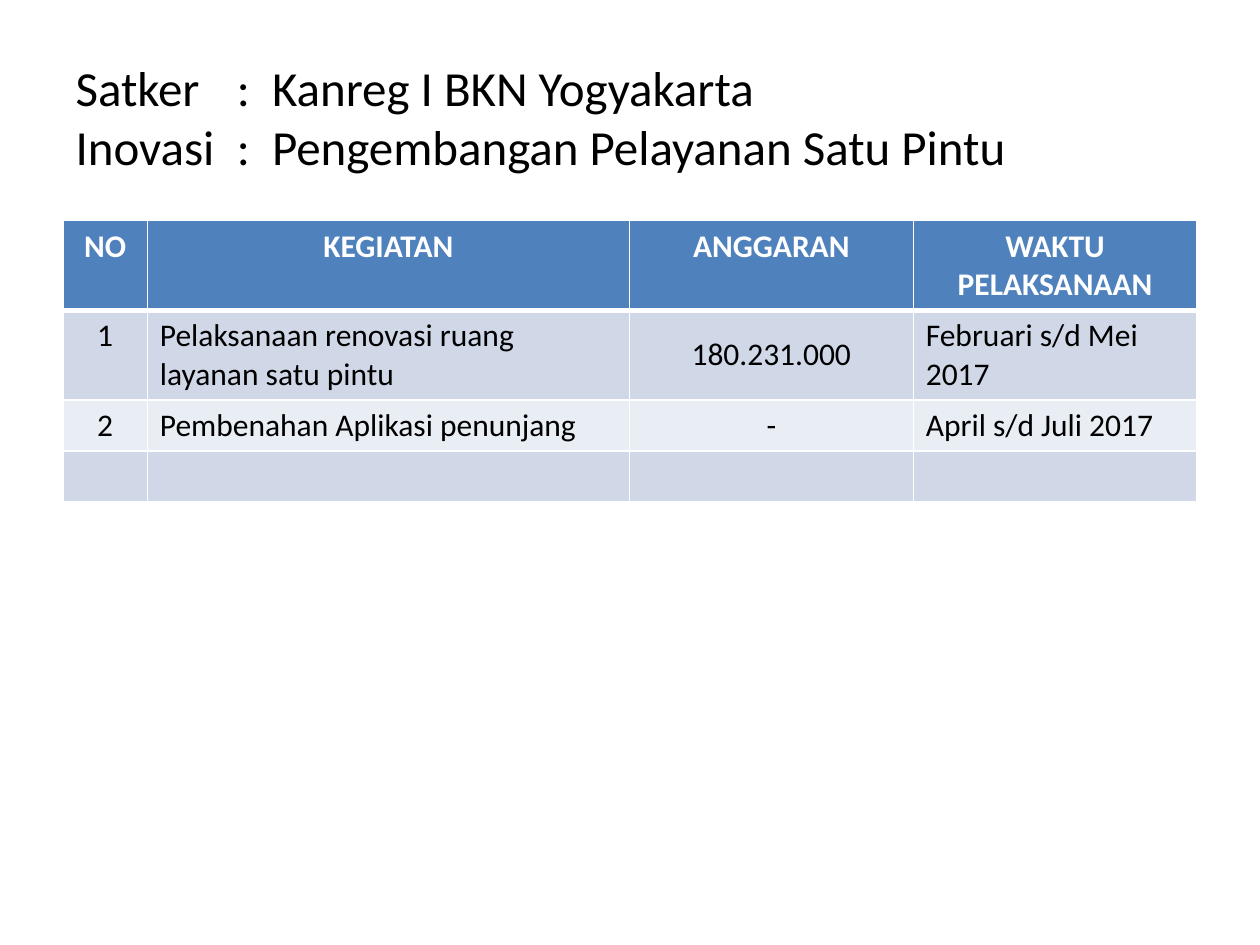
from dataclasses import dataclass

from lxml.etree import SubElement
from pptx import Presentation
from pptx.dml.color import RGBColor
from pptx.enum.text import MSO_ANCHOR, PP_ALIGN
from pptx.oxml.ns import qn
from pptx.util import Cm, Pt


@dataclass(frozen=True)
class Theme:
    font: str = "Calibri"
    title_size: int = 28
    table_size: int = 18
    text: str = "000000"
    header_text: str = "FFFFFF"
    header_fill: str = "4F81BD"
    bands: tuple = ("D0D8E8", "E9EDF4")
    border: str = "FFFFFF"
    thin: int = 1
    thick: int = 3


THEME = Theme()

HEADING = (("Satker", "Kanreg I BKN Yogyakarta"),
           ("Inovasi", "Pengembangan Pelayanan Satu Pintu"))
TAB_STOPS = (3.25, 3.96)

ACTIVITIES = (
    ("NO", "KEGIATAN", "ANGGARAN", "WAKTU PELAKSANAAN"),
    ("1", "Pelaksanaan renovasi ruang layanan satu pintu", "180.231.000",
     "Februari s/d Mei 2017"),
    ("2", "Pembenahan Aplikasi penunjang", "-", "April s/d Juli 2017"),
    ("", "", "", ""),
)
COLUMN_WIDTHS = (1.7, 9.72, 5.72, 5.72)
COLUMN_ALIGNMENTS = (PP_ALIGN.CENTER, PP_ALIGN.LEFT, PP_ALIGN.CENTER, PP_ALIGN.LEFT)
ROW_HEIGHT = 1.03
BUDGET_COLUMN = 2


def format_font(font, size, color, bold=False):
    values = {"name": THEME.font, "size": Pt(size), "bold": bold}
    for attribute, value in values.items():
        setattr(font, attribute, value)
    font.color.rgb = RGBColor.from_string(color)


def place_heading(slide, left, top, width, height):
    heading = slide.shapes.title
    box = {"left": left, "top": top, "width": width, "height": height}
    for attribute, value in box.items():
        setattr(heading, attribute, Cm(value))
    heading.text_frame.vertical_anchor = MSO_ANCHOR.MIDDLE
    lines = heading.text_frame.paragraphs[0]
    lines.text = "\v".join(f"{label}\t:\t{value}" for label, value in HEADING)
    lines.alignment = PP_ALIGN.LEFT
    stops = SubElement(lines._p.get_or_add_pPr(), qn("a:tabLst"))
    for position in TAB_STOPS:
        SubElement(stops, qn("a:tab"), pos=str(Cm(position)), algn="l")
    for run in lines.runs:
        format_font(run.font, THEME.title_size, THEME.text)


def draw_borders(cell, top, bottom):
    properties = cell._tc.get_or_add_tcPr()
    weights = {"lnL": THEME.thin, "lnR": THEME.thin, "lnT": top, "lnB": bottom}
    for side, weight in weights.items():
        line = SubElement(properties, qn(f"a:{side}"), w=str(Pt(weight)))
        fill = SubElement(line, qn("a:solidFill"))
        SubElement(fill, qn("a:srgbClr"), val=THEME.border)


def fill_cell(cell, text, row, column):
    is_header = row == 0
    draw_borders(cell,
                 top=THEME.thick if row == 1 else THEME.thin,
                 bottom=THEME.thick if is_header else THEME.thin)
    fill = THEME.header_fill if is_header else THEME.bands[(row - 1) % 2]
    cell.fill.solid()
    cell.fill.fore_color.rgb = RGBColor.from_string(fill)
    if row == 1 and column == BUDGET_COLUMN:
        cell.vertical_anchor = MSO_ANCHOR.MIDDLE
    cell.text = text
    entry = cell.text_frame.paragraphs[0]
    entry.alignment = PP_ALIGN.CENTER if is_header else COLUMN_ALIGNMENTS[column]
    color = THEME.header_text if is_header else THEME.text
    format_font(entry.font, THEME.table_size, color, is_header)
    for run in entry.runs:
        format_font(run.font, THEME.table_size, color, is_header)


def place_activities(slide, left, top):
    frame = slide.shapes.add_table(
        len(ACTIVITIES), len(COLUMN_WIDTHS), Cm(left), Cm(top),
        Cm(sum(COLUMN_WIDTHS)), Cm(ROW_HEIGHT * len(ACTIVITIES)))
    activities = frame.table
    for column, width in zip(activities.columns, COLUMN_WIDTHS):
        column.width = Cm(width)
    for row, entries in enumerate(ACTIVITIES):
        activities.rows[row].height = Cm(ROW_HEIGHT)
        for column, text in enumerate(entries):
            fill_cell(activities.cell(row, column), text, row, column)


def main():
    presentation = Presentation()
    presentation.slide_width, presentation.slide_height = Cm(25.4), Cm(19.05)
    slide = presentation.slides.add_slide(
        presentation.slide_layouts.get_by_name("Title Only"))
    place_heading(slide, left=1.27, top=0.76, width=22.86, height=3.18)
    place_activities(slide, left=1.27, top=4.45)
    presentation.save("out.pptx")


if __name__ == "__main__":
    main()
